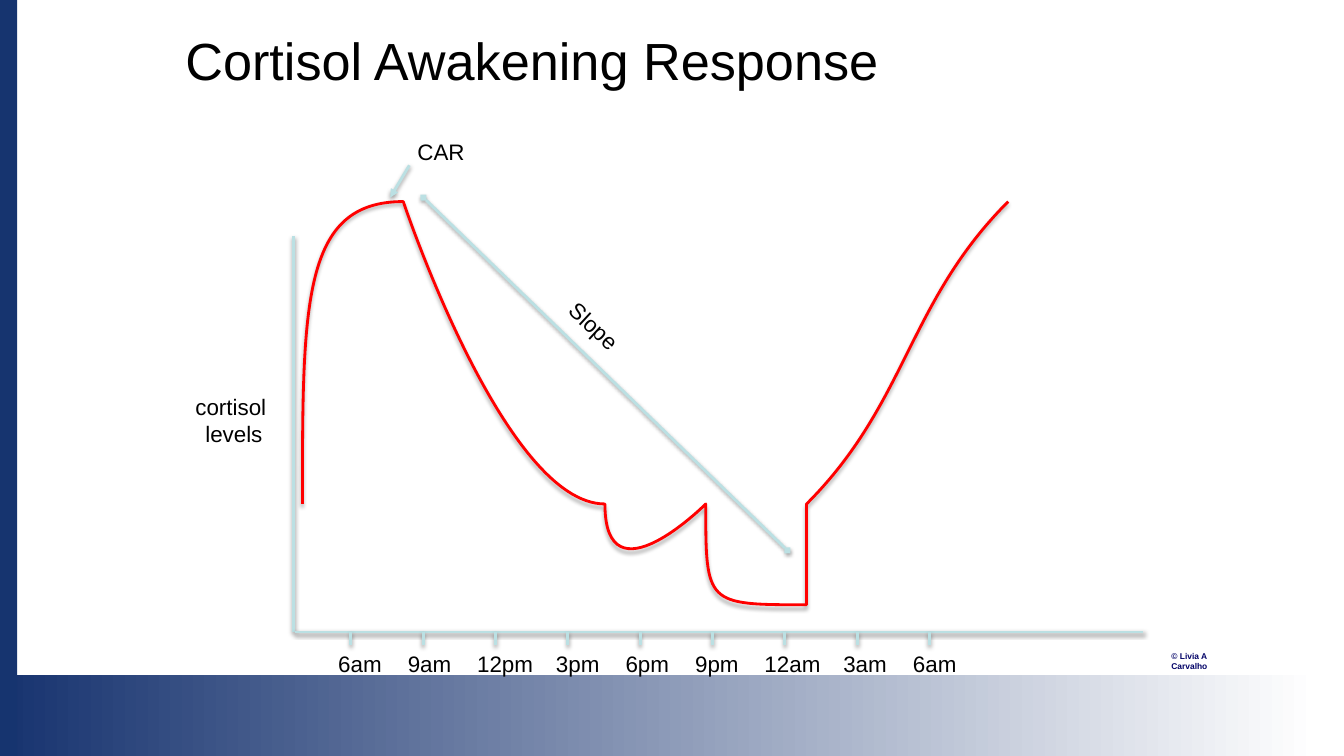
from lxml.etree import SubElement
from pptx import Presentation
from pptx.dml.color import RGBColor
from pptx.enum.shapes import MSO_CONNECTOR, MSO_SHAPE
from pptx.enum.text import MSO_ANCHOR, PP_ALIGN
from pptx.oxml.ns import qn
from pptx.util import Inches, Pt

NAVY = "16346F"
PALE_BLUE = "BBE0E3"
RED = "FF0000"
BLACK = "000000"
WHITE = "FFFFFF"


def color(value):
    return RGBColor.from_string(value)


class SlideBuilder:
    font_name = "Arial"
    label_size = 16
    line_width = 2

    def __init__(self, slide):
        self.slide = slide

    def text(self, left, top, width, height, lines, size=label_size, ink=BLACK,
             align=PP_ALIGN.CENTER, anchor=MSO_ANCHOR.TOP, bold=False, rotation=0):
        box = self.slide.shapes.add_textbox(
            Inches(left), Inches(top), Inches(width), Inches(height))
        box.rotation = rotation
        frame = box.text_frame
        frame.word_wrap = True
        frame.vertical_anchor = anchor
        frame.text = lines
        for paragraph in frame.paragraphs:
            paragraph.alignment = align
            paragraph.font.name = self.font_name
            paragraph.font.size = Pt(size)
            paragraph.font.bold = bold
            paragraph.font.color.rgb = color(ink)

    def band(self, left, top, width, height, fill, fade_to=None):
        band = self.slide.shapes.add_shape(
            MSO_SHAPE.RECTANGLE, Inches(left), Inches(top), Inches(width), Inches(height))
        band.shadow.inherit = False
        band.line.fill.background()
        if fade_to:
            band.fill.gradient()
            band.fill.gradient_angle = 0
            start, end = band.fill.gradient_stops
            start.color.rgb, start.position = color(fill), 0
            end.color.rgb, end.position = color(fade_to), 0.98
        else:
            band.fill.solid()
            band.fill.fore_color.rgb = color(fill)

    def shadow(self, shape, opacity, distance):
        effects = SubElement(shape._element.spPr, qn("a:effectLst"))
        outer = SubElement(effects, qn("a:outerShdw"), blurRad=str(Pt(3.1)),
                           dist=str(Pt(distance)), dir="5400000", rotWithShape="0")
        black = SubElement(outer, qn("a:srgbClr"), val=BLACK)
        SubElement(black, qn("a:alpha"), val=str(opacity * 1000))

    def line(self, x1, y1, x2, y2, head=None, tail=None):
        line = self.slide.shapes.add_connector(
            MSO_CONNECTOR.STRAIGHT, Inches(x1), Inches(y1), Inches(x2), Inches(y2))
        line.line.color.rgb = color(PALE_BLUE)
        line.line.width = Pt(self.line_width)
        outline = line._element.spPr.find(qn("a:ln"))
        for end, kind in (("a:headEnd", head), ("a:tailEnd", tail)):
            if kind:
                SubElement(outline, qn(end), type=kind)
        self.shadow(line, 38, 1.6)

    def curve(self, points):
        builder = self.slide.shapes.build_freeform(
            *points[0], scale=Inches(1))
        builder.add_line_segments(points[1:], close=False)
        curve = builder.convert_to_shape()
        curve.fill.background()
        curve.line.color.rgb = color(RED)
        curve.line.width = Pt(self.line_width)
        outline = next(curve._element.iter(qn("a:path")))
        segments = outline.findall(qn("a:lnTo"))
        for first in range(0, len(segments), 3):
            bezier = SubElement(outline, qn("a:cubicBezTo"))
            for segment in segments[first:first + 3]:
                bezier.append(segment[0])
                outline.remove(segment)
        self.shadow(curve, 35, 1.8)


def main():
    presentation = Presentation()
    presentation.slide_width = Inches(13.33)
    presentation.slide_height = Inches(7.5)
    page = SlideBuilder(presentation.slides.add_slide(presentation.slide_layouts[6]))

    page.text(11.52, 6.41, 0.85, 0.2, "© Livia A Carvalho", size=6, ink="000066",
              align=PP_ALIGN.LEFT, bold=True)
    page.band(0, 6.7, 13.33, 0.8, "17336F", fade_to=WHITE)
    page.band(0, 0, 0.17, 7.5, NAVY)
    page.text(1.74, 0.32, 8.73, 0.54, "Cortisol Awakening Response", size=37.3,
              align=PP_ALIGN.LEFT, anchor=MSO_ANCHOR.MIDDLE)

    axis_y = 6.27
    page.line(2.91, 2.34, 2.91, axis_y)
    page.line(2.93, axis_y, 11.34, axis_y)
    page.text(1.31, 3.85, 2.02, 0.64, "cortisol \nlevels")

    hours = ["6am", "9am", "12pm", "3pm", "6pm", "9pm", "12am", "3am", "6am"]
    first_tick, last_tick = 3.48, 9.22
    tick_gap = (last_tick - first_tick) / (len(hours) - 1)
    hour_left = 3.2
    for index, hour in enumerate(hours):
        tick_x = first_tick + index * tick_gap
        page.line(tick_x, axis_y, tick_x, axis_y + 0.13)
        width, advance = (0.86, 0.78) if len(hour) > 3 else (0.74, 0.69)
        page.text(hour_left, 6.4, width, 0.37, hour)
        hour_left += advance

    page.curve([
        (3.26, 4.73),
        (3.35, 3.41), (3.46, 2.03), (3.89, 2.1),
        (4.31, 2.17), (5.26, 4.59), (5.78, 5.16),
        (6.31, 5.72), (6.73, 5.37), (7.04, 5.49),
        (7.35, 5.61), (7.38, 5.8), (7.64, 5.89),
        (7.9, 5.94), (8.02, 6.01), (8.33, 5.42),
        (8.77, 4.32), (9.33, 2.61), (9.53, 2.05),
    ])
    page.line(4.2, 1.96, 7.81, 5.46, head="diamond", tail="diamond")
    page.text(5.41, 3.3, 1.5, 0.37, "Slope", align=PP_ALIGN.LEFT, rotation=42.9)
    page.text(3.86, 1.32, 1.03, 0.37, "CAR")
    page.line(4.06, 1.64, 3.87, 1.96, tail="triangle")

    presentation.save("out.pptx")


if __name__ == "__main__":
    main()
